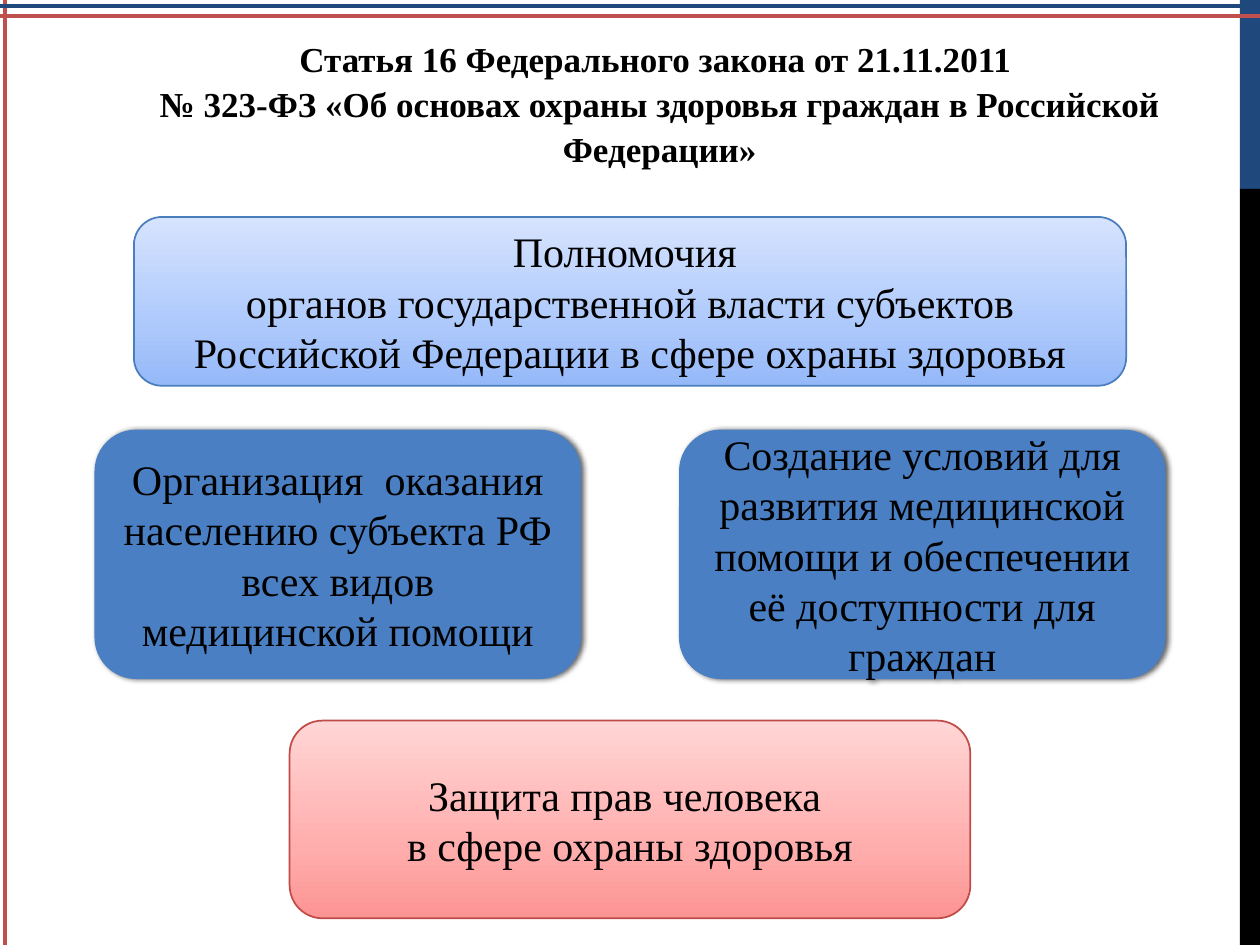
from dataclasses import dataclass
from lxml.etree import SubElement
from pptx import Presentation
from pptx.dml.color import RGBColor
from pptx.enum.shapes import MSO_CONNECTOR, MSO_SHAPE
from pptx.enum.text import MSO_ANCHOR, MSO_AUTO_SIZE, PP_ALIGN
from pptx.oxml.ns import qn
from pptx.util import Pt


@dataclass(frozen=True)
class Theme:
    font: str = "Times New Roman"
    title_size: int = 20
    body_size: int = 24
    text: str = "000000"
    navy: str = "1F497D"
    red: str = "C0504D"
    black: str = "000000"
    card: str = "4A80C3"
    blue_edge: str = "4B7EBC"
    blue_stops: tuple = ((0, "95B8F9"), (35, "ADC9FC"), (100, "D6E3FE"))
    red_edge: str = "BF4C48"
    red_stops: tuple = ((0, "FB9493"), (35, "FFADAC"), (100, "FFD6D5"))


THEME = Theme()
WIDTH, HEIGHT = 720, 540


def rgb(value):
    return RGBColor.from_string(value)


def write(frame, lines, size, bold=False):
    frame.word_wrap = True
    frame.text = "\n".join(lines)
    for paragraph in frame.paragraphs:
        paragraph.alignment = PP_ALIGN.CENTER
        paragraph.font.name = THEME.font
        paragraph.font.size = Pt(size)
        paragraph.font.bold = bold
        paragraph.font.color.rgb = rgb(THEME.text)


def add_block(slide, preset, box, color=None):
    block = slide.shapes.add_shape(preset, *map(Pt, box))
    block.shadow.inherit = False
    block.line.fill.background()
    if color:
        block.fill.solid()
        block.fill.fore_color.rgb = rgb(color)
    return block


def add_rule(slide, start, end, color):
    rule = slide.shapes.add_connector(
        MSO_CONNECTOR.STRAIGHT, *map(Pt, (*start, *end)))
    rule.line.color.rgb = rgb(color)
    rule.line.width = Pt(2.25)
    SubElement(rule._element.spPr, qn("a:effectLst"))


def add_frame(slide, box):
    left, top, width, height = box
    right, bottom = left + width, top + height
    band, split = 11.5, 108
    add_block(slide, MSO_SHAPE.RECTANGLE, (right - band, top, band, split), THEME.navy)
    add_block(slide, MSO_SHAPE.RECTANGLE,
              (right - band, top + split, band, height - split), THEME.black)
    add_rule(slide, (right, top + 9.2), (left, top + 9.2), THEME.red)
    add_rule(slide, (left + 2.8, top), (left + 2.8, bottom), THEME.red)
    add_rule(slide, (left, top + 3.5), (right, top + 3.5), THEME.navy)


def add_title(slide, box, text):
    title = slide.shapes.title
    title.left, title.top, title.width, title.height = map(Pt, box)
    frame = title.text_frame
    write(frame, [text], THEME.title_size, bold=True)
    frame.vertical_anchor = MSO_ANCHOR.TOP
    frame.auto_size = MSO_AUTO_SIZE.SHAPE_TO_FIT_TEXT
    frame.paragraphs[0].line_spacing = 1.07
    frame.paragraphs[0].space_after = Pt(8)


def add_panel(slide, box, lines, stops, edge):
    panel = add_block(slide, MSO_SHAPE.ROUNDED_RECTANGLE, box)
    panel.fill.gradient()
    panel.fill.gradient_angle = 90
    stop_list = panel._element.spPr.find(qn("a:gradFill")).find(qn("a:gsLst"))
    for default in list(stop_list):
        stop_list.remove(default)
    for percent, color in stops:
        stop = SubElement(stop_list, qn("a:gs"), pos=str(percent * 1000))
        SubElement(stop, qn("a:srgbClr"), val=color)
    panel.line.color.rgb = rgb(edge)
    panel.line.width = Pt(1)
    panel.text_frame.vertical_anchor = MSO_ANCHOR.MIDDLE
    write(panel.text_frame, lines, THEME.body_size)


def add_cards(slide, box, texts):
    left, top, width, height = box
    card_width = 278
    step = (width - card_width) / (len(texts) - 1)
    for index, text in enumerate(texts):
        card = add_block(slide, MSO_SHAPE.ROUNDED_RECTANGLE,
                         (left + index * step, top, card_width, height), THEME.card)
        effects = card._element.spPr.find(qn("a:effectLst"))
        shadow = SubElement(effects, qn("a:outerShdw"), blurRad=str(Pt(3)),
                            dist=str(Pt(1.5)), dir="0", rotWithShape="0")
        shade = SubElement(shadow, qn("a:srgbClr"), val=THEME.black)
        SubElement(shade, qn("a:alpha"), val="60000")
        card.text_frame.vertical_anchor = MSO_ANCHOR.MIDDLE
        write(card.text_frame, [text], THEME.body_size)


def main():
    deck = Presentation()
    deck.slide_width, deck.slide_height = Pt(WIDTH), Pt(HEIGHT)
    slide = deck.slides.add_slide(deck.slide_layouts[5])
    add_frame(slide, (0, 0, WIDTH, HEIGHT))
    add_title(slide, (54, 16, 646, 83.5),
              "Статья 16 Федерального закона от 21.11.2011 \v"
              "№ 323-ФЗ «Об основах охраны здоровья граждан в Российской Федерации»")
    add_panel(slide, (76.5, 124, 567, 96.5),
              ["Полномочия ",
               "органов государственной власти субъектов Российской Федерации "
               "в сфере охраны здоровья"],
              THEME.blue_stops, THEME.blue_edge)
    add_cards(slide, (54, 245.5, 612, 142.5),
              ["Организация  оказания населению субъекта РФ всех видов медицинской помощи",
               "Создание условий для развития медицинской помощи и обеспечении "
               "её доступности для граждан"])
    add_panel(slide, (165.5, 411.8, 389, 113),
              ["Защита прав человека ", "в сфере охраны здоровья"],
              THEME.red_stops, THEME.red_edge)
    deck.save("out.pptx")


if __name__ == "__main__":
    main()
